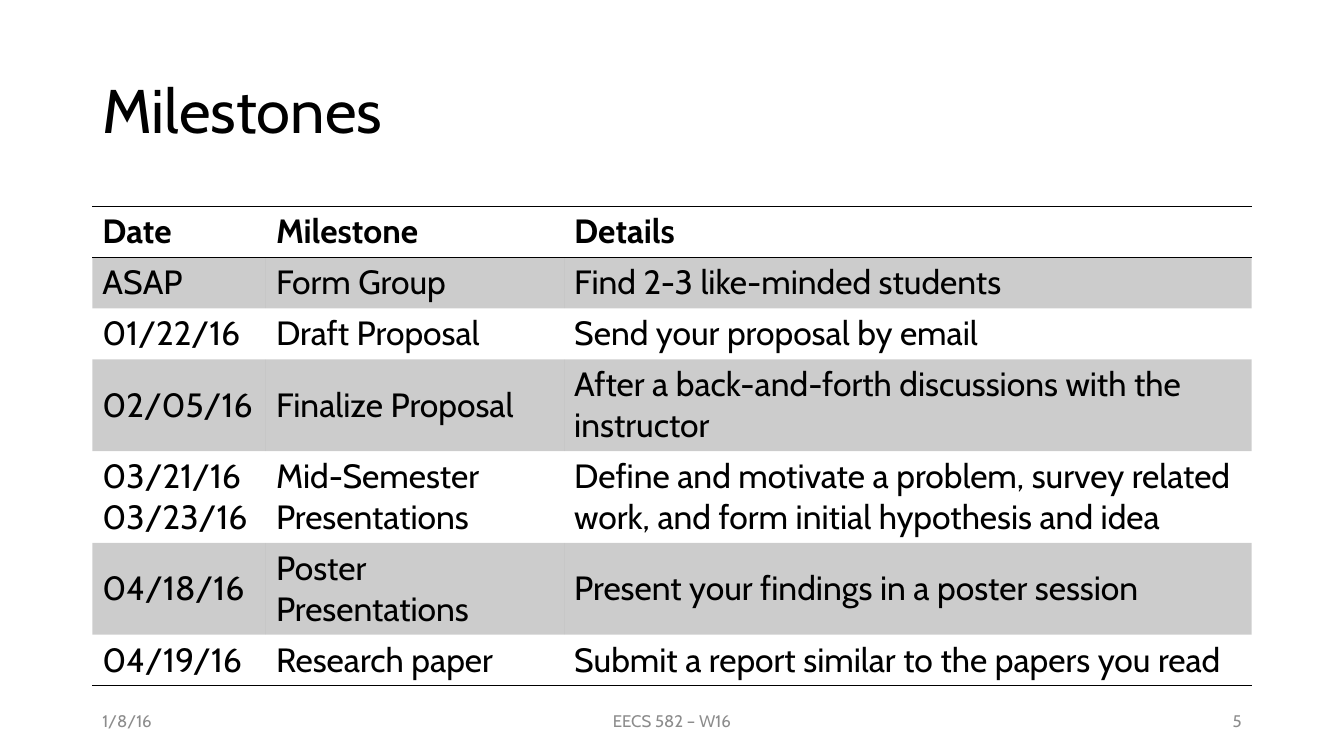
from lxml.etree import SubElement
from pptx import Presentation
from pptx.dml.color import RGBColor
from pptx.enum.text import MSO_ANCHOR, PP_ALIGN
from pptx.oxml.ns import qn
from pptx.util import Pt

BLACK = RGBColor(0x00, 0x00, 0x00)
GREY = RGBColor(0x8C, 0x8C, 0x8C)
FONT = "Cabin"
LEFT, WIDTH = 66, 828
COLUMNS = (124, 213, 491)
ROW_HEIGHT = 29.5
MILESTONES = (
    ("Date", "Milestone", "Details"),
    ("ASAP", "Form Group", "Find 2-3 like-minded students"),
    ("01/22/16", "Draft Proposal", "Send your proposal by email"),
    ("02/05/16", "Finalize Proposal",
     "After a back-and-forth discussions with the instructor"),
    ("03/21/16\n03/23/16", "Mid-Semester Presentations",
     "Define and motivate a problem, survey related work, "
     "and form initial hypothesis and idea"),
    ("04/18/16", "Poster Presentations",
     "Present your findings in a poster session"),
    ("04/19/16", "Research paper",
     "Submit a report similar to the papers you read"),
)


def set_text(tf, text, size, color, align=PP_ALIGN.LEFT, bold=False):
    """Fill a text frame and format each of its paragraphs."""
    tf.text = text
    for p in tf.paragraphs:
        p.alignment = align
        p.font.name = FONT
        p.font.size = Pt(size)
        p.font.bold = bold
        p.font.color.rgb = color


def set_borders(cell, ruled):
    """Rule the named edges of a cell in black and clear the others."""
    tcPr = cell._tc.get_or_add_tcPr()
    for edge in ("lnL", "lnR", "lnT", "lnB"):
        ln = SubElement(tcPr, qn(f"a:{edge}"), w=str(Pt(1)))
        if edge in ruled:
            fill = SubElement(ln, qn("a:solidFill"))
            SubElement(fill, qn("a:srgbClr"), val=str(BLACK))
        else:
            SubElement(ln, qn("a:noFill"))


def set_fill(cell, shaded):
    """Shade a cell with 20% black or leave it clear."""
    if not shaded:
        cell.fill.background()
        return
    cell.fill.solid()
    cell.fill.fore_color.rgb = BLACK
    color = cell._tc.tcPr.find(f"{qn('a:solidFill')}/{qn('a:srgbClr')}")
    SubElement(color, qn("a:alpha"), val="20000")


def add_title(s, x, y, w, h):
    """Place the title in its box."""
    sp = s.shapes.title
    sp.left, sp.top, sp.width, sp.height = Pt(x), Pt(y), Pt(w), Pt(h)
    tf = sp.text_frame
    tf.vertical_anchor = MSO_ANCHOR.MIDDLE
    set_text(tf, "Milestones", 44, BLACK)
    tf.paragraphs[0].line_spacing = 0.9


def add_milestones(s, x, y, w):
    """Place the banded table of milestones."""
    last = len(MILESTONES) - 1
    table = s.shapes.add_table(len(MILESTONES), len(COLUMNS), Pt(x), Pt(y),
                               Pt(w), Pt(ROW_HEIGHT * len(MILESTONES))).table
    for column, width in zip(table.columns, COLUMNS):
        column.width = Pt(width)
    for i, texts in enumerate(MILESTONES):
        table.rows[i].height = Pt(ROW_HEIGHT)
        ruled = (["lnT"] if i in (0, 1) else []) + (["lnB"] if i in (0, last) else [])
        for cell, text in zip(table.rows[i].cells, texts):
            set_text(cell.text_frame, text, 24, BLACK, bold=i == 0)
            cell.vertical_anchor = MSO_ANCHOR.MIDDLE if i else MSO_ANCHOR.TOP
            set_borders(cell, ruled)
            set_fill(cell, i % 2 == 1)


def add_footer(s, x, y, w, h):
    """Place the date, course and slide number along the bottom."""
    side, middle = 216, 324
    for left, width, text, align in (
        (x, side, "1/8/16", PP_ALIGN.LEFT),
        (x + (w - middle) / 2, middle, "EECS 582 – W16", PP_ALIGN.CENTER),
        (x + w - side, side, "5", PP_ALIGN.RIGHT),
    ):
        tf = s.shapes.add_textbox(Pt(left), Pt(y), Pt(width), Pt(h)).text_frame
        tf.word_wrap = True
        tf.vertical_anchor = MSO_ANCHOR.MIDDLE
        set_text(tf, text, 12, GREY, align)


def main():
    """Build the slide and save it."""
    prs = Presentation()
    prs.slide_width, prs.slide_height = Pt(960), Pt(540)
    s = prs.slides.add_slide(prs.slide_layouts[5])
    add_title(s, LEFT, 28.75, WIDTH, 104.4)
    add_milestones(s, LEFT, 147.5, WIDTH)
    add_footer(s, LEFT, 500.5, WIDTH, 28.75)
    prs.save("out.pptx")


if __name__ == "__main__":
    main()
